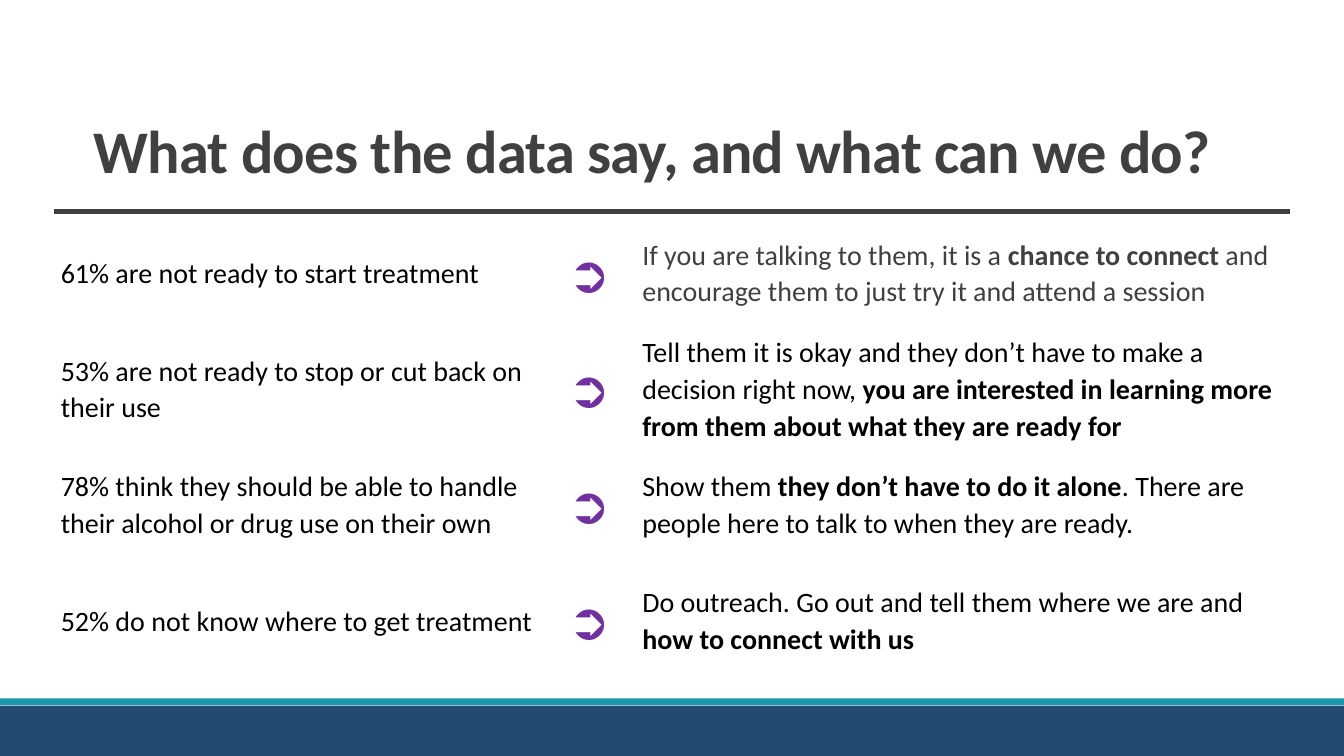
from lxml.etree import SubElement
from pptx import Presentation
from pptx.dml.color import RGBColor
from pptx.enum.shapes import MSO_SHAPE as Preset
from pptx.enum.text import MSO_ANCHOR as Anchor, PP_ALIGN as Align
from pptx.oxml.ns import qn
from pptx.util import Pt

BLACK, GRAY, PURPLE, WHITE = "000000", "404040", "7030A0", "FFFFFF"
COLUMN_WIDTHS = (349.2, 66.24, 468)
RULE_HEIGHT, ROW_HEIGHT = 4.32, 82.8

FINDINGS = [
    ("61% are not ready to start treatment", GRAY,
     [("If you are talking to them, it is a ", False),
      ("chance to connect ", True),
      ("and encourage them to just try it and attend a session", False)]),
    ("53% are not ready to stop or cut back on their use", BLACK,
     [("Tell them it is okay and they don’t have to make a decision right now, ", False),
      ("you are interested in learning more from them about what they are ready for", True)]),
    ("78% think they should be able to handle their alcohol or drug use on their own", BLACK,
     [("Show them ", False),
      ("they don’t have to do it alone", True),
      (". There are people here to talk to when they are ready.", False)]),
    ("52% do not know where to get treatment", BLACK,
     [("Do outreach. Go out and tell them where we are and ", False),
      ("how to connect with us", True)]),
]


def set_all(target, values):
    for name, value in values.items():
        setattr(target, name, value)


def paint(fill, color):
    fill.solid()
    fill.fore_color.rgb = RGBColor.from_string(color)


def add_span(para, text, size, color, bold=False):
    span = para.add_run()
    span.text = text
    set_all(span.font, {"name": "Calibri", "size": Pt(size), "bold": bold})
    span.font.color.rgb = RGBColor.from_string(color)
    return span


def add_band(page, top, height, color):
    band = page.shapes.add_shape(Preset.RECTANGLE, 0, Pt(top), Pt(960), Pt(height))
    band.shadow.inherit = False
    band.line.fill.background()
    paint(band.fill, color)


def add_title(page, text):
    box = page.shapes.add_textbox(Pt(59.76), Pt(80.64), Pt(840.96), Pt(55.44))
    set_all(box.text_frame, {"word_wrap": True, "vertical_anchor": Anchor.BOTTOM})
    para = box.text_frame.paragraphs[0]
    para.line_spacing = 0.85
    span = add_span(para, text, 43.2, GRAY, True)
    span.font._element.set("spc", "-50")


def fill_cell(cell, spans, size, color, align=Align.LEFT):
    paint(cell.fill, WHITE)
    set_all(cell, {"margin_left": Pt(5), "margin_right": Pt(5), "margin_top": 0,
                   "margin_bottom": 0, "vertical_anchor": Anchor.MIDDLE})
    para = cell.text_frame.paragraphs[0]
    set_all(para, {"alignment": align, "line_spacing": 1.07})
    for text, bold in spans:
        add_span(para, text, size, color, bold)


def add_rule_row(table):
    for cell in table.rows[0].cells:
        paint(cell.fill, GRAY)
        set_all(cell, {"margin_top": 0, "margin_bottom": 0})
        para = cell.text_frame.paragraphs[0]
        SubElement(para._p, qn("a:endParaRPr"), sz="100")
    table.cell(0, 0).merge(table.cell(0, 2))


def add_findings(page):
    height = RULE_HEIGHT + ROW_HEIGHT * len(FINDINGS)
    table = page.shapes.add_table(len(FINDINGS) + 1, 3, Pt(38.4), Pt(149.04),
                                  Pt(sum(COLUMN_WIDTHS)), Pt(height)).table
    set_all(table, {"first_row": False, "horz_banding": False})
    for column, width in zip(table.columns, COLUMN_WIDTHS):
        column.width = Pt(width)
    for index, row in enumerate(table.rows):
        row.height = Pt(ROW_HEIGHT if index else RULE_HEIGHT)
    add_rule_row(table)
    for index, (finding, color, advice) in enumerate(FINDINGS, 1):
        fill_cell(table.cell(index, 0), [(finding, False)], 20, BLACK)
        fill_cell(table.cell(index, 1), [("➲", False)], 36, PURPLE, Align.CENTER)
        fill_cell(table.cell(index, 2), advice, 20, color)


def main():
    deck = Presentation()
    set_all(deck, {"slide_width": Pt(960), "slide_height": Pt(540)})
    page = deck.slides.add_slide(deck.slide_layouts[6])
    add_band(page, 504, 36, "234A70")
    add_band(page, 498.8, 5, "1D97AC")
    add_title(page, "What does the data say, and what can we do?")
    add_findings(page)
    deck.save("out.pptx")


if __name__ == "__main__":
    main()
